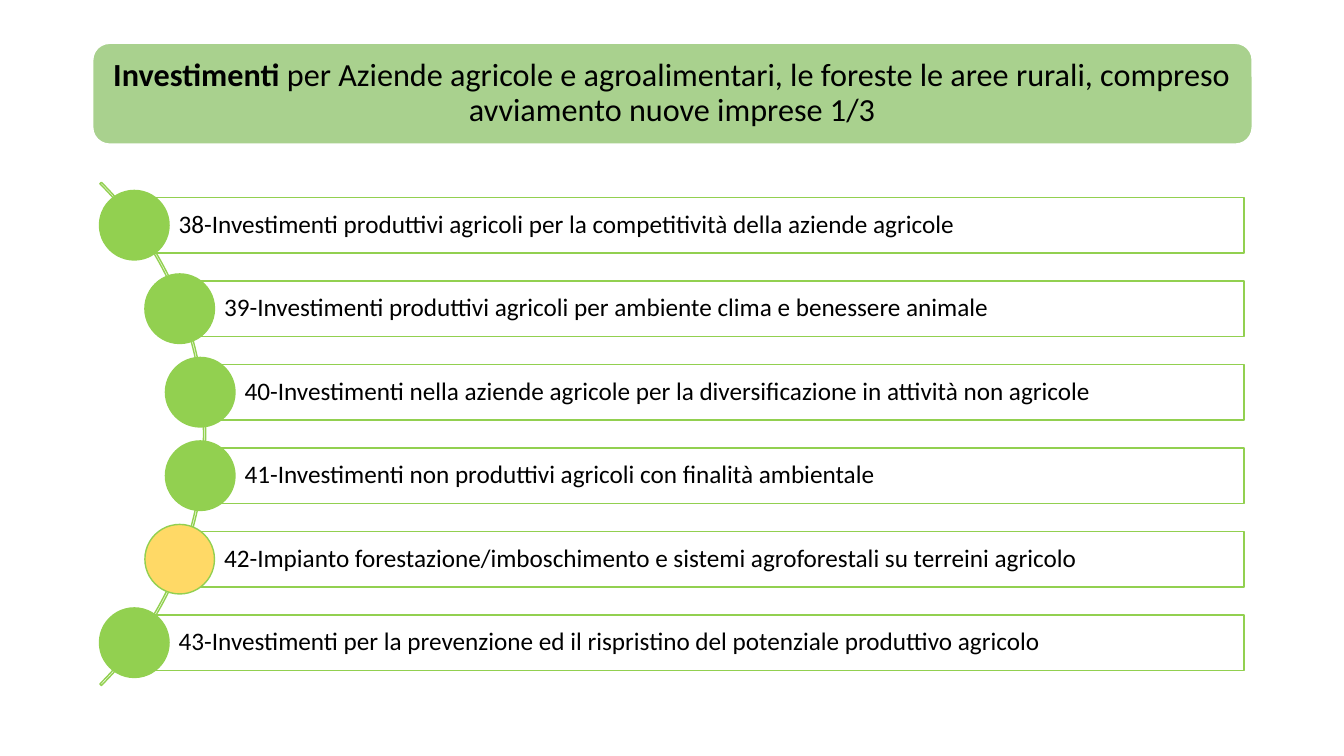
from math import sqrt

from pptx import Presentation
from pptx.dml.color import RGBColor
from pptx.enum.shapes import MSO_SHAPE
from pptx.enum.text import MSO_ANCHOR, PP_ALIGN
from pptx.util import Inches, Pt

GREEN, PALE_GREEN, YELLOW = "92D050", "A9D18E", "FFD966"
TITLE = ("Investimenti", " per Aziende agricole e agroalimentari, le foreste le aree rurali, "
         "compreso avviamento nuove imprese 1/3")
MEASURES = [
    ("38-Investimenti produttivi agricoli per la competitività della aziende agricole", GREEN),
    ("39-Investimenti produttivi agricoli per ambiente clima e benessere animale", GREEN),
    ("40-Investimenti nella aziende agricole per la diversificazione in attività non agricole", GREEN),
    ("41-Investimenti non produttivi agricoli con finalità ambientale", GREEN),
    ("42-Impianto forestazione/imboschimento e sistemi agroforestali su terreini agricolo", YELLOW),
    ("43-Investimenti per la prevenzione ed il rispristino del potenziale produttivo agricolo", GREEN),
]


def rgb(color):
    return RGBColor.from_string(color)


def add_shape(s, kind, x, y, w, h, fill=None, line=GREEN):
    sp = s.shapes.add_shape(kind, Inches(x), Inches(y), Inches(w), Inches(h))
    sp.shadow.inherit = False
    if fill:
        sp.fill.solid()
        sp.fill.fore_color.rgb = rgb(fill)
    else:
        sp.fill.background()
    sp.line.color.rgb = rgb(line)
    sp.line.width = Pt(1)
    return sp


def write(sp, parts, size, align, left, margin):
    """Fill a shape with one paragraph made of the given runs."""
    tf = sp.text_frame
    tf.word_wrap = True
    tf.vertical_anchor = MSO_ANCHOR.MIDDLE
    tf.margin_left = Inches(left)
    tf.margin_right = tf.margin_top = tf.margin_bottom = Inches(margin)
    p = tf.paragraphs[0]
    p.alignment = align
    p.line_spacing = 0.9
    for part in parts:
        r = p.add_run()
        r.text = part
        r.font.name = "Calibri"
        r.font.size = Pt(size)
        r.font.color.rgb = rgb("000000")
    return p


def add_title(s, x, y, w, h):
    sp = add_shape(s, MSO_SHAPE.ROUNDED_RECTANGLE, x, y, w, h, PALE_GREEN, "FFFFFF")
    p = write(sp, TITLE, 23, PP_ALIGN.CENTER, 0.15, 0.15)
    p.runs[0].font.bold = True


def add_measures(s, x, y, w, h):
    """Place the measures on bars that start along an arc."""
    radius, dot, bar_h = 3.53, 0.69, 0.55
    arc_x, arc_y = x - 2.5, y + h / 2
    arc = add_shape(s, MSO_SHAPE.BLOCK_ARC, arc_x - radius, arc_y - radius, 2 * radius, 2 * radius)
    # Start and end angles: 315 and 45 degrees
    for i, value in enumerate((189, 27, 0.003)):
        arc.adjustments[i] = value

    pitch = h / len(MEASURES)
    for i, (text, color) in enumerate(MEASURES):
        cy = y + (i + 0.5) * pitch
        left = arc_x + sqrt(3.5 ** 2 - (cy - arc_y) ** 2)
        bar = add_shape(s, MSO_SHAPE.RECTANGLE, left, cy - bar_h / 2, x + w - left, bar_h)
        write(bar, [text], 18, PP_ALIGN.LEFT, 0.44, 0.05)
        add_shape(s, MSO_SHAPE.OVAL, left - dot / 2, cy - dot / 2, dot, dot, color)


def main():
    prs = Presentation()
    prs.slide_width, prs.slide_height = Inches(13.33), Inches(7.5)
    s = prs.slides.add_slide(prs.slide_layouts[6])
    add_title(s, 0.92, 0.43, 11.5, 1)
    add_measures(s, 1.01, 1.82, 11.33, 4.97)
    prs.save("out.pptx")


if __name__ == "__main__":
    main()
